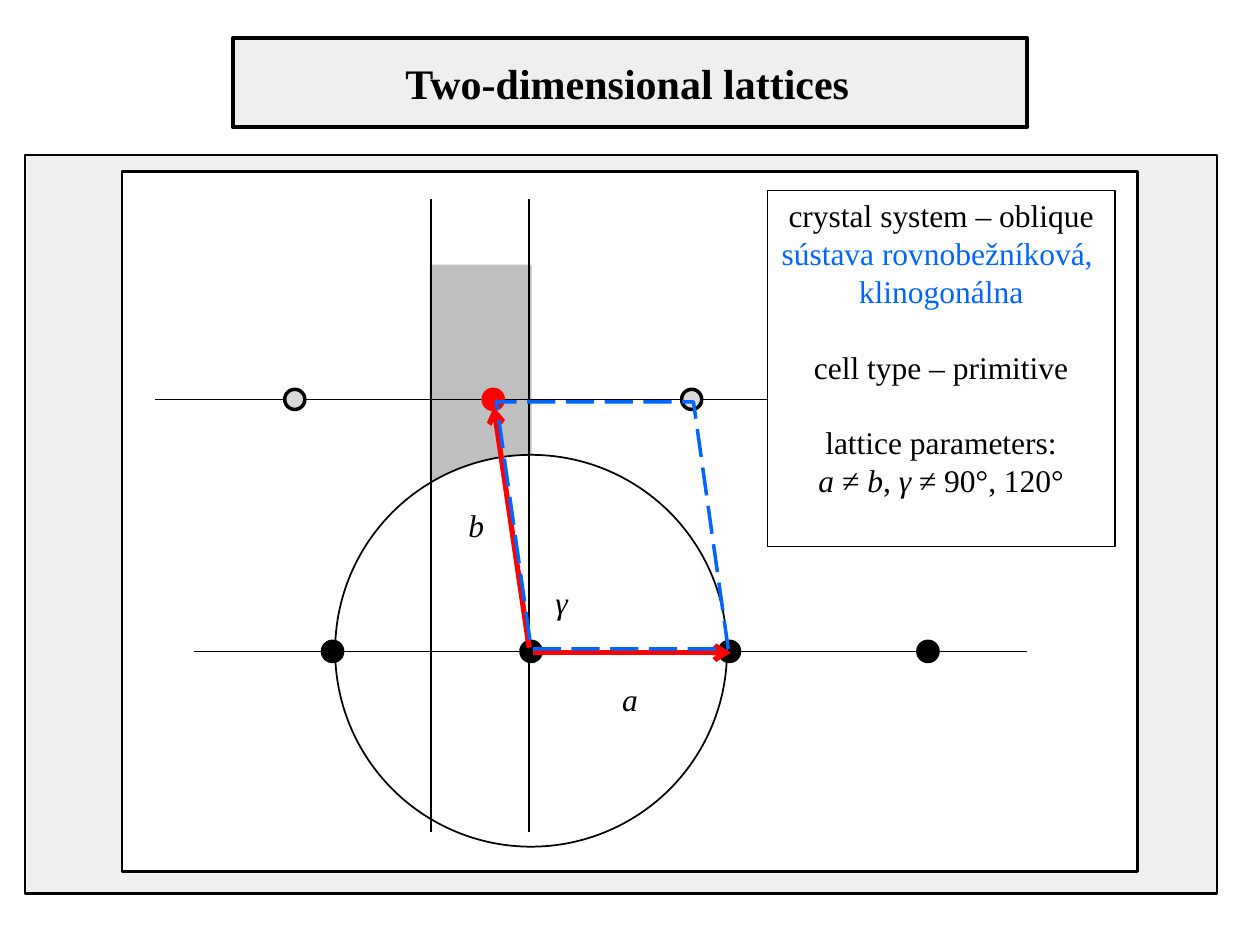
from dataclasses import dataclass

from lxml import etree
from pptx import Presentation
from pptx import util as u
from pptx.dml import color
from pptx.enum import dml, shapes, text
from pptx.oxml import ns

BLACK, WHITE, PALE, GREY = "000000", "FFFFFF", "EFEFEF", "BFBFBF"
SILVER, RED, BLUE = "D9D9D9", "FF0000", "0066FF"
RECT, OVAL = shapes.MSO_SHAPE.RECTANGLE, shapes.MSO_SHAPE.OVAL
ATOM, PITCH = 0.16, 1.575


def rgb(value):
    return color.RGBColor.from_string(value)


@dataclass
class Sketch:
    """Draws lattice diagram elements on one slide in a shared style."""

    slide: object
    font: str = "Times New Roman"

    def shape(self, kind, box, fill=None, line=None, width=1):
        figure = self.slide.shapes.add_shape(kind, *map(u.Inches, box))
        figure.shadow.inherit = False
        if fill:
            figure.fill.solid()
            figure.fill.fore_color.rgb = rgb(fill)
        else:
            figure.fill.background()
        if line:
            figure.line.color.rgb = rgb(line)
            figure.line.width = u.Pt(width)
        else:
            figure.line.fill.background()
        return figure

    def line(self, start, end, ink=BLACK, width=1, arrow=False):
        link = self.slide.shapes.add_connector(
            shapes.MSO_CONNECTOR.STRAIGHT, *map(u.Inches, (*start, *end)))
        link.line.color.rgb = rgb(ink)
        link.line.width = u.Pt(width)
        if arrow:
            etree.SubElement(link.line._get_or_add_ln(), ns.qn("a:tailEnd"), type="arrow")
        etree.SubElement(link._element.spPr, ns.qn("a:effectLst"))

    def atoms(self, left, top, inks):
        for index, (fill, line) in enumerate(inks):
            self.shape(OVAL, (left + index * PITCH, top, ATOM, ATOM), fill, line, 2)

    def style(self, run, size=18, ink=BLACK, bold=False, italic=False):
        run.font.name = self.font
        run.font.size = u.Pt(size)
        run.font.color.rgb = rgb(ink)
        run.font.bold, run.font.italic = bold, italic

    def label(self, box, words, **look):
        frame = self.slide.shapes.add_textbox(*map(u.Inches, box)).text_frame
        frame.text = words
        frame.word_wrap = False
        frame.auto_size = text.MSO_AUTO_SIZE.SHAPE_TO_FIT_TEXT
        self.style(frame.paragraphs[0].runs[0], **look)

    def panel(self, box, lines):
        frame = self.shape(RECT, box, WHITE, BLACK, 0.75).text_frame
        frame.word_wrap = False
        frame.vertical_anchor = text.MSO_ANCHOR.TOP
        for index, (gap, ink, pieces) in enumerate(lines):
            paragraph = frame.add_paragraph() if index else frame.paragraphs[0]
            paragraph.alignment = text.PP_ALIGN.CENTER
            paragraph.line_spacing = u.Pt(21.6)
            paragraph.space_before = u.Pt(gap)
            for position, piece in enumerate(pieces):
                run = paragraph.add_run()
                run.text = piece
                self.style(run, ink=ink, italic=len(pieces) > 1 and position % 2 == 0)


def main():
    deck = Presentation()
    deck.slide_width, deck.slide_height = u.Inches(10), u.Inches(7.5)
    sketch = Sketch(deck.slides.add_slide(deck.slide_layouts[6]))

    sketch.shape(RECT, (0.2, 1.23, 9.46, 5.86), PALE, BLACK, 1.5)
    sketch.shape(RECT, (0.97, 1.36, 8.06, 5.56), WHITE, BLACK, 1.5)
    sketch.shape(RECT, (1.54, 2.1, 6.61, 4.02), GREY)
    for mask in ((1.24, 5.19, 7.1, 1.07), (4.22, 1.84, 4.19, 3.77), (1.33, 1.85, 2.08, 3.6)):
        sketch.shape(RECT, mask, WHITE)
    sketch.shape(OVAL, (2.66, 3.61, 3.11, 3.11), WHITE, BLACK)

    sketch.line((1.54, 5.17), (8.15, 5.17))
    sketch.atoms(2.56, 5.09, [(BLACK, BLACK)] * 4)
    for x in (3.42, 4.2):
        sketch.line((x, 1.58), (x, 6.6))
    sketch.line((1.23, 3.17), (7.85, 3.17))
    sketch.atoms(2.26, 3.09, [(SILVER, BLACK), (RED, RED), (SILVER, BLACK)])

    sketch.shape(RECT, (1.85, 0.3, 6.3, 0.71), PALE, BLACK, 2.25)
    sketch.label((3.12, 0.41, 3.76, 0.5), "Two-dimensional lattices", size=24, bold=True)

    for start, end in (((4.23, 5.18), (5.8, 5.18)), ((4.2, 5.14), (3.92, 3.23))):
        sketch.line(start, end, RED, 3, arrow=True)

    sketch.panel((6.09, 1.51, 2.76, 2.83), [
        (0, BLACK, ["crystal system – oblique"]),
        (0, BLUE, ["sústava rovnobežníková, "]),
        (0, BLUE, ["klinogonálna"]),
        (21.6, BLACK, ["cell type – primitive"]),
        (21.6, BLACK, ["lattice parameters:"]),
        (0, BLACK, ["a", " ≠ ", "b", ", ", "γ ", "≠ 90°, 120°"]),
    ])

    cell = sketch.shape(shapes.MSO_SHAPE.PARALLELOGRAM, (3.94, 3.19, 1.84, 1.96), None, BLUE, 2)
    cell.adjustments[0] = 0.15
    cell.line.dash_style = dml.MSO_LINE.LONG_DASH
    cell._element.spPr.xfrm.set("flipH", "1")

    for words, box in (("a", (4.84, 5.35, 0.33, 0.4)), ("b", (3.62, 3.97, 0.33, 0.4)),
                       ("γ", (4.31, 4.58, 0.3, 0.4))):
        sketch.label(box, words, italic=True)

    deck.save("out.pptx")


if __name__ == "__main__":
    main()
